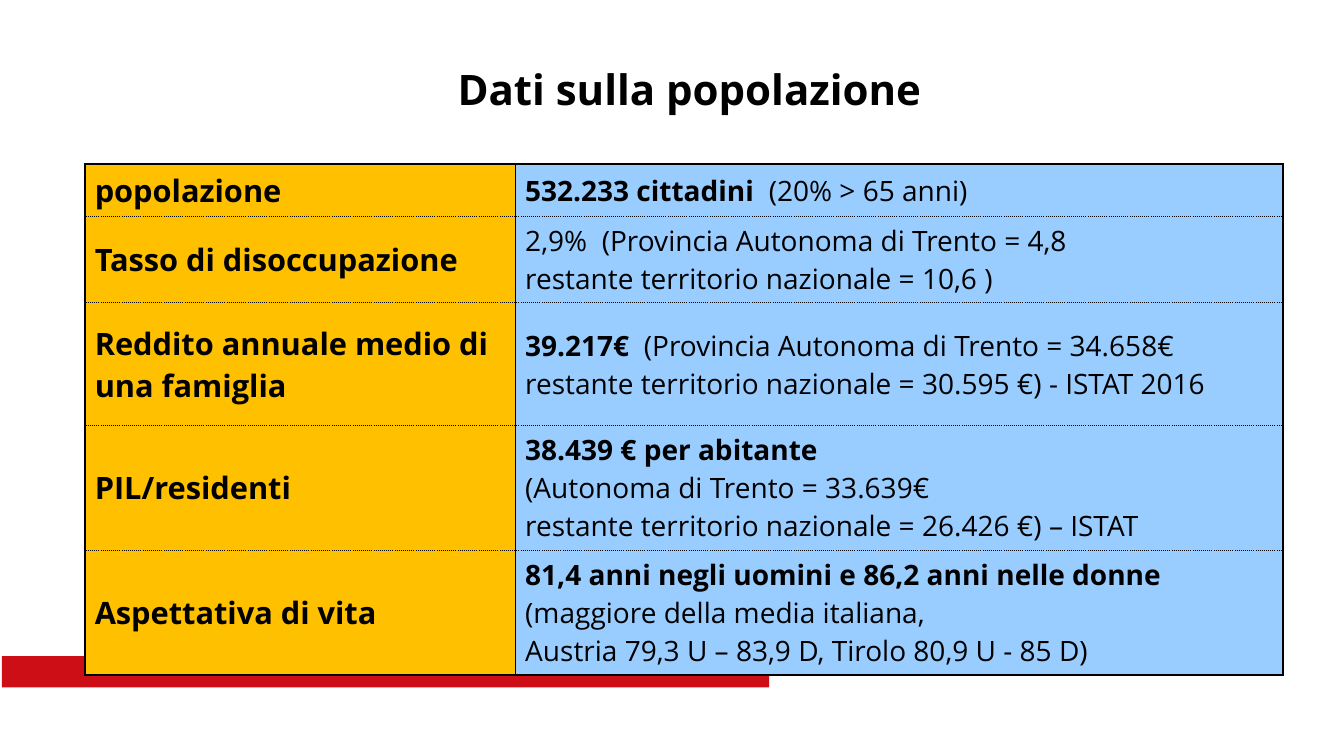
from lxml import etree
from pptx import Presentation
from pptx.dml.color import RGBColor
from pptx.enum.shapes import MSO_SHAPE
from pptx.enum.text import MSO_ANCHOR, PP_ALIGN
from pptx.oxml.ns import qn
from pptx.util import Pt

TITLE = "Dati sulla popolazione"
# (height, label, lines); each line is (bold part, regular part)
ROWS = [
    (37.3, "popolazione", [("532.233 cittadini  ", "(20% > 65 anni)")]),
    (61.6, "Tasso di disoccupazione", [
        ("", "2,9%  (Provincia Autonoma di Trento = 4,8"),
        ("", "restante territorio nazionale = 10,6 )")]),
    (87.8, "Reddito annuale medio di una famiglia", [
        ("39.217€  ", "(Provincia Autonoma di Trento = 34.658€"),
        ("", "restante territorio nazionale = 30.595 €) - ISTAT 2016")]),
    (88.9, "PIL/residenti", [
        ("38.439 € per abitante", ""),
        ("", "(Autonoma di Trento = 33.639€"),
        ("", "restante territorio nazionale = 26.426 €) – ISTAT")]),
    (88.9, "Aspettativa di vita", [
        ("81,4 anni negli uomini e 86,2 anni nelle donne", ""),
        ("", "(maggiore della media italiana,"),
        ("", "Austria 79,3 U – 83,9 D, Tirolo 80,9 U - 85 D)")]),
]
COL_WIDTHS = (307.5, 548.6)
LEFT, TABLE_TOP = 60.5, 117.4

FONT = "Open Sans"
BLACK = RGBColor(0x00, 0x00, 0x00)
RED = RGBColor(0xCD, 0x0E, 0x16)
AMBER = RGBColor(0xFF, 0xC0, 0x00)
SKY = RGBColor(0x99, 0xCC, 0xFF)
OUTER, INNER, DOTTED = (1.5, "solid"), (0.5, "solid"), (0.5, "dot")
MIDDLE = MSO_ANCHOR.MIDDLE
LEFT_ALIGN, CENTER = PP_ALIGN.LEFT, PP_ALIGN.CENTER


def write(tf, lines, size, align=LEFT_ALIGN):
    """Fill a text frame; each line is a (bold part, regular part) pair."""
    tf.word_wrap = True
    for i, parts in enumerate(lines):
        p = tf.add_paragraph() if i else tf.paragraphs[0]
        p.alignment = align
        for text, bold in zip(parts, (True, False)):
            if text:
                r = p.add_run()
                r.text = text
                r.font.name = FONT
                r.font.size = Pt(size)
                r.font.bold = bold
                r.font.color.rgb = BLACK


def set_borders(cell, left, right, top, bottom):
    """Each side is a (width, dash) pair."""
    tc_pr = cell._tc.get_or_add_tcPr()
    sides = zip("LRTB", (left, right, top, bottom))
    for i, (side, (width, dash)) in enumerate(sides):
        ln = etree.Element(qn("a:ln" + side), w=str(Pt(width)))
        fill = etree.SubElement(ln, qn("a:solidFill"))
        etree.SubElement(fill, qn("a:srgbClr"), val=str(BLACK))
        etree.SubElement(ln, qn("a:prstDash"), val=dash)
        tc_pr.insert(i, ln)


def add_data_table(slide):
    heights = [row[0] for row in ROWS]
    table = slide.shapes.add_table(
        len(ROWS), len(COL_WIDTHS), Pt(LEFT), Pt(TABLE_TOP),
        Pt(sum(COL_WIDTHS)), Pt(sum(heights))).table
    table.first_row = table.horz_banding = False
    for column, width in zip(table.columns, COL_WIDTHS):
        column.width = Pt(width)

    for i, (height, label, lines) in enumerate(ROWS):
        table.rows[i].height = Pt(height)
        top = OUTER if i == 0 else DOTTED
        bottom = OUTER if i == len(ROWS) - 1 else DOTTED
        columns = [([(label, "")], 22, AMBER, OUTER, INNER),
                   (lines, 20, SKY, INNER, OUTER)]
        for j, (content, size, color, left, right) in enumerate(columns):
            cell = table.cell(i, j)
            cell.vertical_anchor = MIDDLE
            cell.fill.solid()
            cell.fill.fore_color.rgb = color
            set_borders(cell, left, right, top, bottom)
            write(cell.text_frame, content, size)


def main():
    prs = Presentation()
    prs.slide_width, prs.slide_height = Pt(960), Pt(540)
    slide = prs.slides.add_slide(prs.slide_layouts[6])

    bar = slide.shapes.add_shape(
        MSO_SHAPE.RECTANGLE, Pt(1.4), Pt(468.7), Pt(548), Pt(22.3))
    bar.shadow.inherit = False
    bar.fill.solid()
    bar.fill.fore_color.rgb = RED
    bar.line.fill.background()

    title = slide.shapes.add_textbox(Pt(LEFT), Pt(20.9), Pt(864), Pt(85))
    title.text_frame.vertical_anchor = MIDDLE
    write(title.text_frame, [(TITLE, "")], 30, CENTER)

    add_data_table(slide)
    prs.save("out.pptx")


if __name__ == "__main__":
    main()
